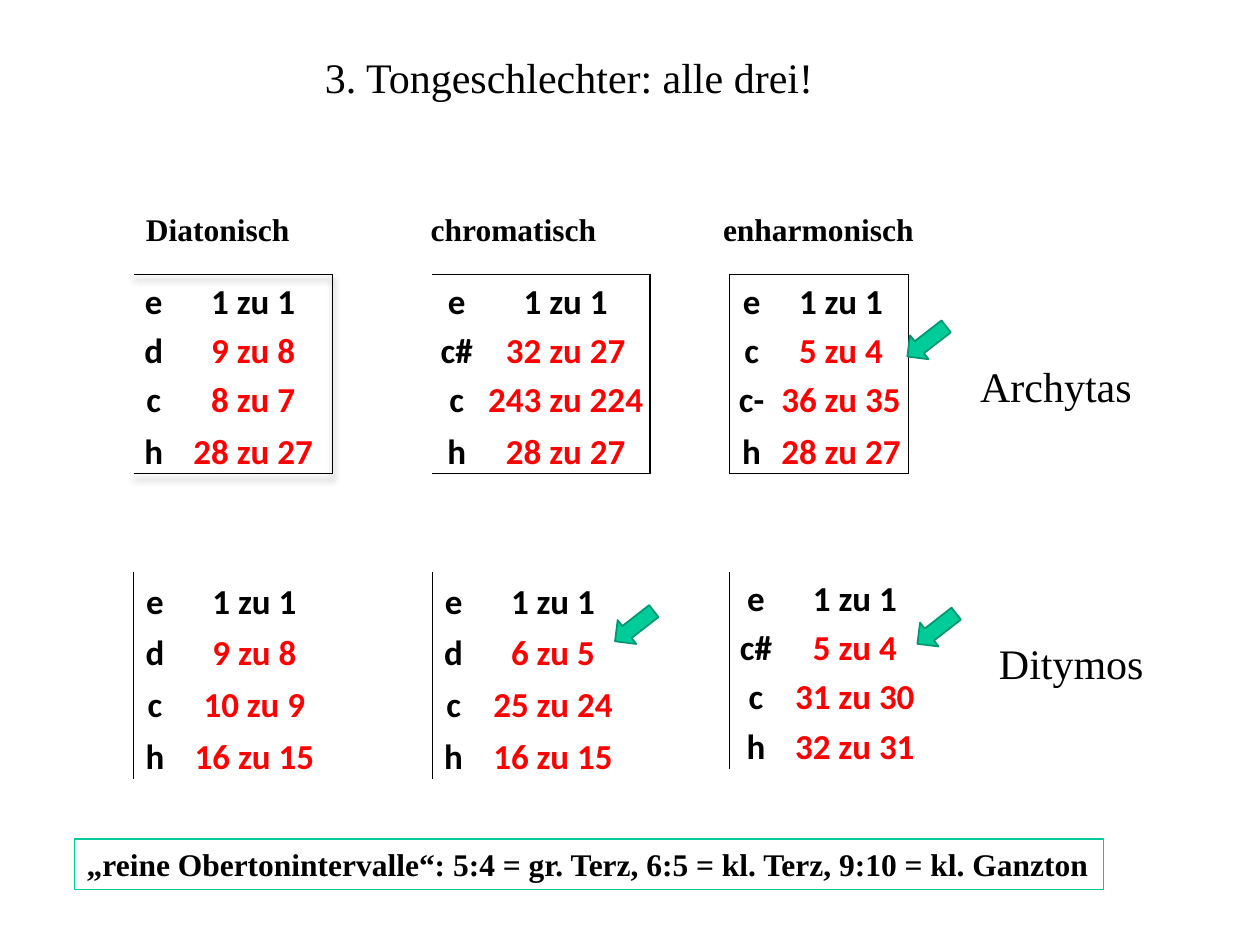
from dataclasses import dataclass
from itertools import product

from lxml.etree import SubElement, Element
from pptx import Presentation
from pptx.dml.color import RGBColor
from pptx.enum.shapes import MSO_SHAPE as Shape
from pptx.enum.text import MSO_ANCHOR as Anchor, MSO_AUTO_SIZE as Fit, PP_ALIGN as Align
from pptx.oxml.ns import qn
from pptx.util import Inches, Pt


@dataclass(frozen=True)
class Theme:
    ink: str = "000000"
    ratio: str = "FF0000"
    mint: str = "00CC99"
    edge: str = "009771"
    serif: str = "Times New Roman"
    sans: str = "Calibri"
    title: int = 24
    head: int = 18
    cell: int = 20


@dataclass(frozen=True)
class Scale:
    """A tetrachord table; sides lists the outer borders (L, R, T, B)."""
    left: float
    top: float
    cols: tuple
    rows: tuple
    notes: tuple
    ratios: tuple
    sides: str
    line: float
    inset: float = 0
    shade: bool = False


@dataclass(frozen=True)
class Label:
    text: str
    left: float
    top: float
    width: float
    height: float = 0.5
    size: int = Theme.title
    bold: bool = False
    tabs: tuple = ()


THEME = Theme()
PLAIN = "{2D5ABB26-0587-4C30-8999-92F81FD0307C}"
LEFTS = (1.06, 3.43, 5.79)
UP, LOW = 2.18, 4.54
STEPS = (0.39, 0.39, 0.39, 0.41)

SCALES = (
    Scale(LEFTS[0], UP, (0.32, 1.26), STEPS, ("e", "d", "c", "h"),
          ("1 zu 1", "9 zu 8", "8 zu 7", "28 zu 27"), "RTB", 1, shade=True),
    Scale(LEFTS[1], UP, (0.39, 1.34), STEPS, ("e", "c#", "c", "h"),
          ("1 zu 1", "32 zu 27", "243 zu 224", "28 zu 27"), "RTB", 1),
    Scale(LEFTS[2], UP, (0.35, 1.07), STEPS, ("e", "c", "c-", "h"),
          ("1 zu 1", "5 zu 4", "36 zu 35", "28 zu 27"), "LRTB", 0.5),
    Scale(LEFTS[0], LOW, (0.34, 1.24), (0.41,) * 4, ("e", "d", "c", "h"),
          ("1 zu 1", "9 zu 8", "10 zu 9", "16 zu 15"), "L", 0.5, 0.01),
    Scale(LEFTS[1], LOW, (0.34, 1.24), (0.41,) * 4, ("e", "d", "c", "h"),
          ("1 zu 1", "6 zu 5", "25 zu 24", "16 zu 15"), "L", 0.5, 0.01),
    Scale(LEFTS[2], LOW, (0.42, 1.15), (0.39,) * 4, ("e", "c#", "c", "h"),
          ("1 zu 1", "5 zu 4", "31 zu 30", "32 zu 31"), "L", 0.5, 0.01),
)
LABELS = (
    Label("3. Tongeschlechter: alle drei!", 2.48, 0.36, 4.11),
    Label("Diatonisch\tchromatisch\tenharmonisch", 1.06, 1.62, 6.35, 0.4,
          THEME.head, True, (2.26, 4.58)),
    Label("Archytas", 7.68, 2.81, 1.42),
    Label("Ditymos", 7.83, 5.01, 1.36),
)
NOTE = Label("„reine Obertonintervalle“: 5:4 = gr. Terz, 6:5 = kl. Terz, 9:10 = kl. Ganzton",
             0.59, 6.66, 8.17, 0.4, THEME.head, True)
ARROWS = ((4.84, 4.85), (7.24, 4.87), (7.16, 2.59))


def style(para, face: str, size: int, bold: bool, color: str) -> None:
    font = para.font
    font.name, font.size, font.bold = face, Pt(size), bold
    font.color.rgb = RGBColor.from_string(color)


def write(shape, label: Label) -> None:
    frame = shape.text_frame
    frame.word_wrap = bool(label.tabs)
    frame.auto_size = Fit.SHAPE_TO_FIT_TEXT
    para = frame.paragraphs[0]
    para.text = label.text
    para.alignment = Align.LEFT
    if label.tabs:
        stops = SubElement(para._p.get_or_add_pPr(), qn("a:tabLst"))
        for pos in label.tabs:
            SubElement(stops, qn("a:tab"), pos=str(Inches(pos)), algn="l")
    style(para, THEME.serif, label.size, label.bold, THEME.ink)


def box(label: Label) -> tuple:
    return tuple(map(Inches, (label.left, label.top, label.width, label.height)))


def border(cell, sides: str, width: float) -> None:
    """Line the named sides and clear the others."""
    props = cell._tc.get_or_add_tcPr()
    for side in "LRTB":
        line = SubElement(props, qn(f"a:ln{side}"), w=str(Pt(width)))
        if side in sides:
            fill = SubElement(line, qn("a:solidFill"))
            SubElement(fill, qn("a:srgbClr"), val=THEME.ink)
        else:
            SubElement(line, qn("a:noFill"))


def shade(table) -> None:
    """Give the whole table a soft drop shadow."""
    effects = Element(qn("a:effectLst"))
    drop = SubElement(effects, qn("a:outerShdw"), blurRad="50800", dist="38100",
                      dir="5400000", algn="t", rotWithShape="0")
    color = SubElement(drop, qn("a:srgbClr"), val=THEME.ink)
    SubElement(color, qn("a:alpha"), val="40000")
    table._tbl.tblPr.insert(0, effects)


def draw_scale(slide, scale: Scale) -> None:
    frame = slide.shapes.add_table(
        len(scale.rows), len(scale.cols), Inches(scale.left), Inches(scale.top),
        Inches(sum(scale.cols)), Inches(sum(scale.rows)))
    table = frame.table
    table.first_row = table.horz_banding = False
    table._tbl.tblPr.find(qn("a:tableStyleId")).text = PLAIN
    if scale.shade:
        shade(table)
    for col, width in zip(table.columns, scale.cols):
        col.width = Inches(width)
    for row, height in zip(table.rows, scale.rows):
        row.height = Inches(height)

    last = len(scale.rows) - 1
    for r, c in product(range(last + 1), range(2)):
        cell = table.cell(r, c)
        cell.margin_left = cell.margin_right = cell.margin_top = Inches(scale.inset)
        cell.margin_bottom = 0
        cell.vertical_anchor = Anchor.BOTTOM
        outer = ("R" if c else "L") + ("T" if r == 0 else "") + ("B" if r == last else "")
        border(cell, set(outer) & set(scale.sides), scale.line)
        cell.fill.background()
        para = cell.text_frame.paragraphs[0]
        para.text = (scale.notes, scale.ratios)[c][r]
        para.alignment = Align.CENTER
        style(para, THEME.sans, THEME.cell, True, THEME.ratio if r and c else THEME.ink)


def draw_arrow(slide, left: float, top: float) -> None:
    arrow = slide.shapes.add_shape(
        Shape.RIGHT_ARROW, Inches(left), Inches(top), Inches(0.39), Inches(0.24))
    arrow.rotation = 142.1
    arrow.shadow.inherit = False
    arrow.fill.solid()
    arrow.fill.fore_color.rgb = RGBColor.from_string(THEME.mint)
    arrow.line.color.rgb = RGBColor.from_string(THEME.edge)
    arrow.line.width = Pt(1)


def draw_note(slide, label: Label) -> None:
    note = slide.shapes.add_shape(Shape.RECTANGLE, *box(label))
    note.shadow.inherit = False
    note.fill.background()
    note.line.color.rgb = RGBColor.from_string(THEME.mint)
    note.line.width = Pt(0.75)
    write(note, label)


def main() -> None:
    deck = Presentation()
    deck.slide_width, deck.slide_height = Inches(10), Inches(7.5)
    slide = deck.slides.add_slide(deck.slide_layouts[6])
    for scale in SCALES:
        draw_scale(slide, scale)
    for label in LABELS:
        write(slide.shapes.add_textbox(*box(label)), label)
    for spot in ARROWS:
        draw_arrow(slide, *spot)
    draw_note(slide, NOTE)
    deck.save("out.pptx")


if __name__ == "__main__":
    main()
